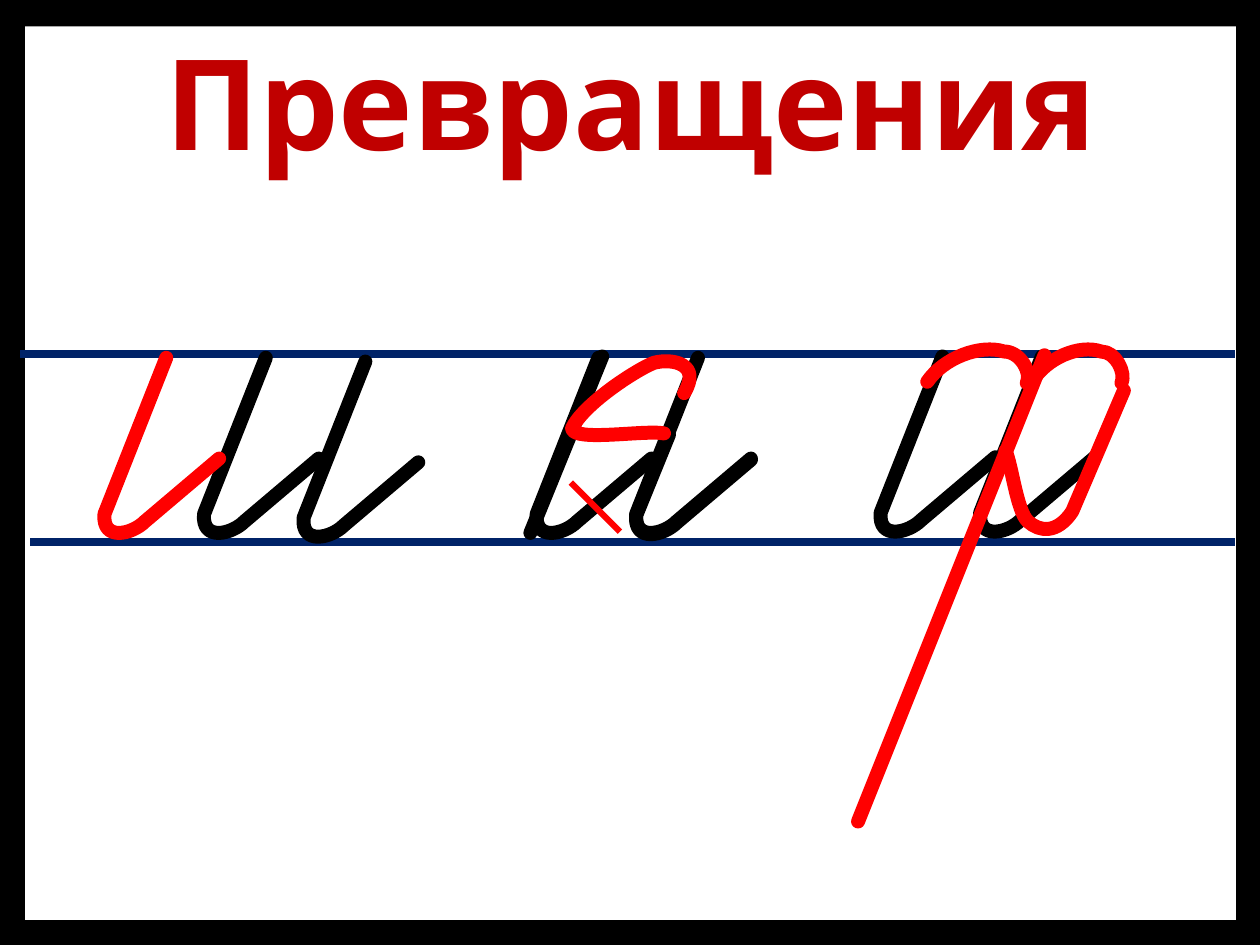
"""Build a slide on how one cursive letter turns into others."""
import pptx
import pptx.util
import pptx.dml.color
import pptx.enum.shapes
import pptx.enum.text
import pptx.oxml.ns
from lxml import etree

Inches, Pt = pptx.util.Inches, pptx.util.Pt
qn = pptx.oxml.ns.qn
COLORS = {"frame": "000000", "paper": "FFFFFF", "rule": "002368",
          "title": "C00000", "ink": "000000", "change": "FF0000"}
TITLE = "Превращения"
UNITS = 1000
STROKE_WIDTH = 8

RULES = [
    ((0.16, 2.81), (9.8, 2.81), "rule", 4.25),
    ((0.24, 4.3), (9.8, 4.3), "rule", 4.25),
]
CROSSING = ((4.53, 3.83), (4.92, 4.22), "change", 3.5)

# Each segment holds one point for a line or three points for a Bézier curve.
BOWL = [[(-0.49, 1.24)], [(-0.51, 1.46), (-0.27, 1.4), (-0.17, 1.3)], [(0.42, 0.8)]]
HOOK = [[(0, 0)]] + BOWL
HOOK_END = [[(-0.23, 0.6)]] + BOWL
ARCH = [[(0, 0)], [(0.13, -0.19), (0.42, -0.3), (0.61, -0.24)],
        [(0.74, -0.24), (0.83, -0.07), (0.79, 0.01)]]
SLANT = [[(4.78, 2.83)], [(4.21, 4.23)]]
LOOP = [[(5.43, 3.12)], [(5.57, 2.89), (5.34, 2.84), (5.19, 2.88)],
        [(5.04, 2.94), (4.63, 3.21), (4.54, 3.4)],
        [(4.55, 3.51), (5.12, 3.41), (5.27, 3.44)]]
RIGHT_SIDE = [[(8.92, 3.1)], [(8.51, 4.06)], [(8.39, 4.24), (8.25, 4.22), (8.16, 4.14)],
              [(8.07, 4.06), (8.03, 3.68), (7.98, 3.58)]]
LONG_STEM = [[(8.29, 2.82)], [(6.81, 6.52)]]

STROKES = [
    (HOOK, 2.11, 2.84, 1, "ink"),
    (HOOK, 2.9, 2.87, 1, "ink"),
    (HOOK, 5.54, 2.84, 1, "ink"),
    (HOOK, 8.27, 2.83, 1, "ink"),
    (HOOK, 4.75, 2.84, 1, "ink"),
    (HOOK, 1.32, 2.84, 1, "change"),
    (SLANT, 0, 0, 1, "ink"),
    (HOOK_END, 5.54, 2.85, 1, "ink"),
    (LOOP, 0, 0, 1, "change"),
    (HOOK, 7.48, 2.83, 1, "ink"),
    (ARCH, 7.36, 3.03, 1, "change"),
    (ARCH, 8.19, 3.03, 0.9, "change"),
    (RIGHT_SIDE, 0, 0, 1, "change"),
]


def color(name):
    return pptx.dml.color.RGBColor.from_string(COLORS[name])


def add_rule(slide, start, end, color_name, width):
    rule = slide.shapes.add_connector(
        pptx.enum.shapes.MSO_CONNECTOR.STRAIGHT, *map(Inches, start + end))
    rule.line.color.rgb = color(color_name)
    rule.line.width = Pt(width)
    etree.SubElement(rule.line._get_or_add_ln().getparent(), qn("a:effectLst"))


def add_stroke(slide, segments, left, top, stretch, color_name):
    points = [(round((left + x * stretch) * UNITS), round((top + y) * UNITS))
              for segment in segments for x, y in segment]
    builder = slide.shapes.build_freeform(*points[0], scale=Inches(1) / UNITS)
    builder.add_line_segments(points[1:], close=False)
    stroke = builder.convert_to_shape()
    steps = iter(list(stroke._element.iter(qn("a:lnTo"))))
    for segment in segments[1:]:
        step = next(steps)
        if len(segment) == 3:
            step.tag = qn("a:cubicBezTo")
            for _ in range(2):
                extra = next(steps)
                step.append(extra[0])
                extra.getparent().remove(extra)
    stroke.shadow.inherit = False
    stroke.fill.background()
    stroke.line.color.rgb = color(color_name)
    stroke.line.width = Pt(STROKE_WIDTH)
    outline = stroke.line._get_or_add_ln()
    outline.set("cap", "rnd")
    etree.SubElement(outline, qn("a:round"))


def add_title(slide):
    box = slide.shapes.add_textbox(Inches(0.51), Inches(0.44), Inches(9), Inches(0.71))
    frame = box.text_frame
    frame.word_wrap = True
    frame.vertical_anchor = pptx.enum.text.MSO_ANCHOR.MIDDLE
    heading = frame.paragraphs[0]
    heading.text = TITLE
    heading.alignment = pptx.enum.text.PP_ALIGN.CENTER
    heading.font.name = "Open Sans"
    heading.font.size = Pt(72)
    heading.font.bold = True
    heading.font.color.rgb = color("title")


def main():
    deck = pptx.Presentation()
    deck.slide_width, deck.slide_height = Inches(10), Inches(7.5)
    slide = deck.slides.add_slide(deck.slide_layouts[6])
    slide.background.fill.solid()
    slide.background.fill.fore_color.rgb = color("frame")
    paper = slide.shapes.add_shape(
        pptx.enum.shapes.MSO_SHAPE.RECTANGLE,
        Inches(0.2), Inches(0.21), Inches(9.61), Inches(7.09))
    paper.shadow.inherit = False
    paper.fill.solid()
    paper.fill.fore_color.rgb = color("paper")
    paper.line.fill.background()
    for rule in RULES:
        add_rule(slide, *rule)
    add_title(slide)
    for stroke in STROKES:
        add_stroke(slide, *stroke)
    add_rule(slide, *CROSSING)
    add_stroke(slide, LONG_STEM, 0, 0, 1, "change")
    deck.save("out.pptx")


if __name__ == "__main__":
    main()
